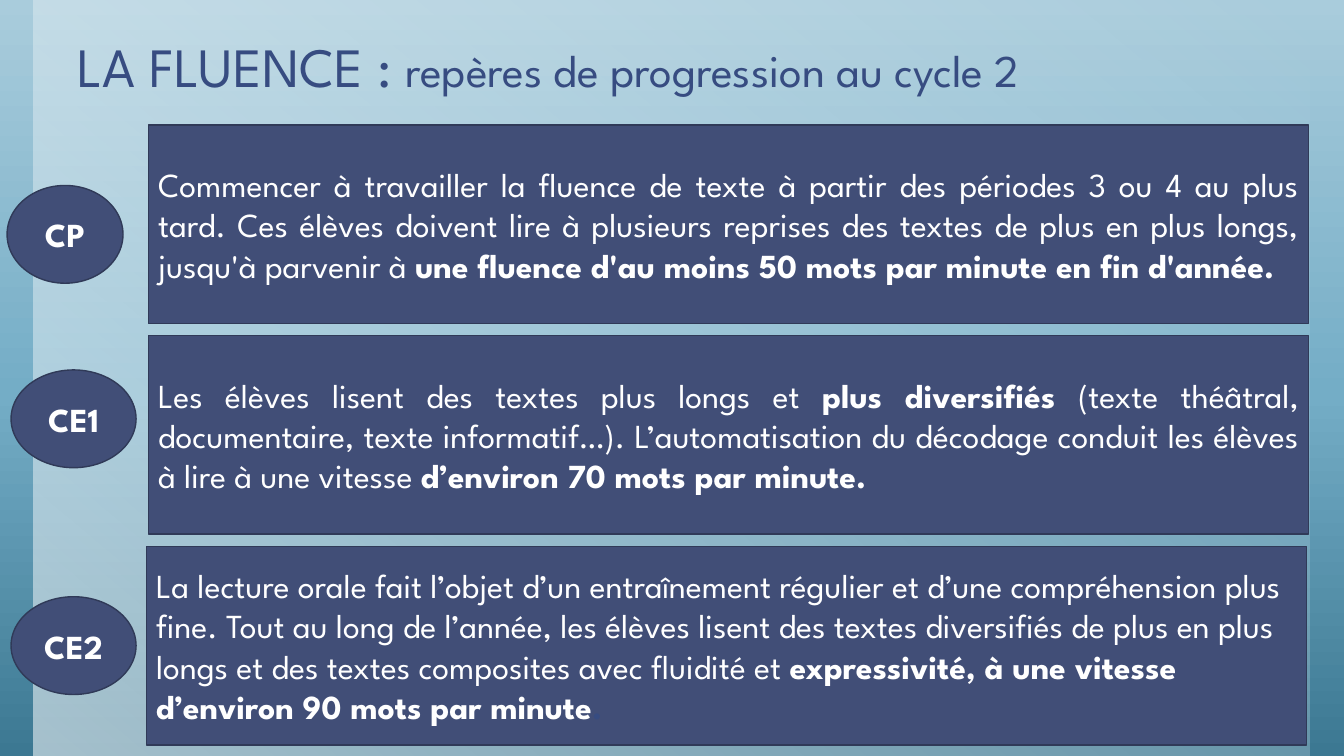
from dataclasses import dataclass
from typing import Any, NamedTuple

from lxml import etree
from pptx import Presentation
from pptx import util as u
from pptx.dml.color import RGBColor
from pptx.enum import shapes, text
from pptx.oxml import ns

NAVY = RGBColor(0x41, 0x4E, 0x77)
NAVY_EDGE = RGBColor(0x30, 0x3A, 0x58)
TITLE_BLUE = RGBColor(0x37, 0x4C, 0x81)
WHITE = RGBColor(0xFF, 0xFF, 0xFF)
SKY_DEEP = RGBColor(0x3C, 0x78, 0x92)
SKY_MID = RGBColor(0x74, 0xAD, 0xC6)
SKY_PALE = RGBColor(0xA9, 0xCC, 0xDC)

FONT = "League Spartan"
BODY_SIZE = 24
BOX_WIDTH, BOX_HEIGHT = 11.51, 1.97
BADGE_HEIGHT = 0.97
JUSTIFY = text.PP_ALIGN.JUSTIFY
LEFT = text.PP_ALIGN.LEFT
CENTER = text.PP_ALIGN.CENTER


class Stop(NamedTuple):
    position: int
    color: RGBColor
    opacity: int = 100


class Area(NamedTuple):
    left: float
    top: float
    width: float
    height: float

    def lengths(self) -> list[int]:
        return [u.Inches(value) for value in self]


class Words(NamedTuple):
    content: str
    bold: bool = False
    color: RGBColor = WHITE
    size: float = BODY_SIZE


@dataclass(frozen=True)
class Level:
    name: str
    badge: Area
    box: Area
    align: text.PP_ALIGN
    words: list[Words]


LEVELS = [
    Level("CP", Area(0.07, 1.84, 1.15, BADGE_HEIGHT), Area(1.47, 1.24, BOX_WIDTH, BOX_HEIGHT), JUSTIFY, [
        Words("Commencer à travailler la fluence de texte à partir des périodes 3 ou 4 au plus tard. "
              "Ces élèves doivent lire à plusieurs reprises des textes de plus en plus longs, "
              "jusqu'à parvenir à "),
        Words("une fluence d'au moins 50 mots par minute en fin d'année. ", True),
    ]),
    Level("CE1", Area(0.11, 3.67, 1.24, BADGE_HEIGHT), Area(1.47, 3.33, BOX_WIDTH, BOX_HEIGHT), JUSTIFY, [
        Words("Les élèves lisent des textes plus longs et "),
        Words("plus diversifiés ", True),
        Words("(texte théâtral, documentaire, texte informatif…). L’automatisation du décodage "
              "conduit les élèves à lire à une vitesse "),
        Words("d’environ 70 mots par minute.", True),
    ]),
    Level("CE2", Area(0.11, 5.92, 1.24, BADGE_HEIGHT), Area(1.45, 5.42, BOX_WIDTH, BOX_HEIGHT), LEFT, [
        Words("La lecture orale fait l’objet d’un entraînement régulier et d’une compréhension plus fine. "
              "Tout au long de l’année, les élèves lisent des textes diversifiés de plus en plus longs "
              "et des textes composites avec fluidité et "),
        Words("expressivité, à une vitesse d’environ 90 mots par minute", True),
        Words(".", True, TITLE_BLUE),
    ]),
]

TITLE = [
    Words("LA FLUENCE : ", color=TITLE_BLUE, size=39.6),
    Words("repères de progression au cycle 2", color=TITLE_BLUE, size=32.4),
]


def apply_format(target: Any, values: dict[str, Any]) -> None:
    for name, value in values.items():
        setattr(target, name, value)


def set_gradient(fill: Any, element: Any, stops: list[Stop], angle: int) -> None:
    fill.gradient()
    gradient = element.find(".//" + ns.qn("a:gradFill"))
    stop_list = gradient.find(ns.qn("a:gsLst"))
    for old_stop in list(stop_list):
        stop_list.remove(old_stop)
    for stop in stops:
        mark = etree.SubElement(stop_list, ns.qn("a:gs"), pos=str(stop.position * 1000))
        color = etree.SubElement(mark, ns.qn("a:srgbClr"), val=str(stop.color))
        if stop.opacity < 100:
            etree.SubElement(color, ns.qn("a:alpha"), val=str(stop.opacity * 1000))
    gradient.find(ns.qn("a:lin")).set("ang", str(angle * 60000))


def write(frame: Any, words: list[Words], paragraph_format: dict[str, Any]) -> None:
    frame.word_wrap = True
    paragraph = frame.paragraphs[0]
    apply_format(paragraph, paragraph_format)
    for part in words:
        run = paragraph.add_run()
        run.text = part.content
        apply_format(run.font, {"name": FONT, "size": u.Pt(part.size), "bold": part.bold})
        run.font.color.rgb = part.color


def add_panel(slide: Any, preset: shapes.MSO_SHAPE, area: Area) -> Any:
    panel = slide.shapes.add_shape(preset, *area.lengths())
    panel.shadow.inherit = False
    return panel


def add_card(slide: Any, preset: shapes.MSO_SHAPE, area: Area,
             words: list[Words], align: text.PP_ALIGN) -> None:
    card = add_panel(slide, preset, area)
    card.fill.solid()
    card.fill.fore_color.rgb = NAVY
    card.line.color.rgb = NAVY_EDGE
    card.line.width = u.Pt(1)
    card.text_frame.vertical_anchor = text.MSO_ANCHOR.MIDDLE
    write(card.text_frame, words, {"alignment": align})


def add_backdrop(slide: Any) -> None:
    set_gradient(slide.background.fill, slide.element,
                 [Stop(0, SKY_DEEP), Stop(48, SKY_MID), Stop(100, SKY_PALE)], 270)
    veil = add_panel(slide, shapes.MSO_SHAPE.RECTANGLE, Area(0.33, 0, 12.66, 7.5))
    set_gradient(veil.fill, veil.element, [Stop(0, WHITE, 0), Stop(100, WHITE, 55)], 130)
    veil.line.fill.background()


def add_title(slide: Any) -> None:
    heading = slide.shapes.add_textbox(*Area(0.64, 0.28, 12.08, 0.77).lengths()).text_frame
    apply_format(heading, {
        "vertical_anchor": text.MSO_ANCHOR.BOTTOM,
        "margin_left": u.Inches(0.13), "margin_right": u.Inches(0.13),
        "margin_top": u.Inches(0.07), "margin_bottom": u.Inches(0.07),
    })
    write(heading, TITLE, {"alignment": LEFT, "line_spacing": 0.85})


def main() -> None:
    deck = Presentation()
    apply_format(deck, {"slide_width": u.Inches(13.33), "slide_height": u.Inches(7.5)})
    slide = deck.slides.add_slide(deck.slide_layouts[6])
    add_backdrop(slide)
    add_title(slide)
    for level in LEVELS:
        add_card(slide, shapes.MSO_SHAPE.RECTANGLE, level.box, level.words, level.align)
        add_card(slide, shapes.MSO_SHAPE.OVAL, level.badge, [Words(level.name, True)], CENTER)
    deck.save("out.pptx")


if __name__ == "__main__":
    main()
